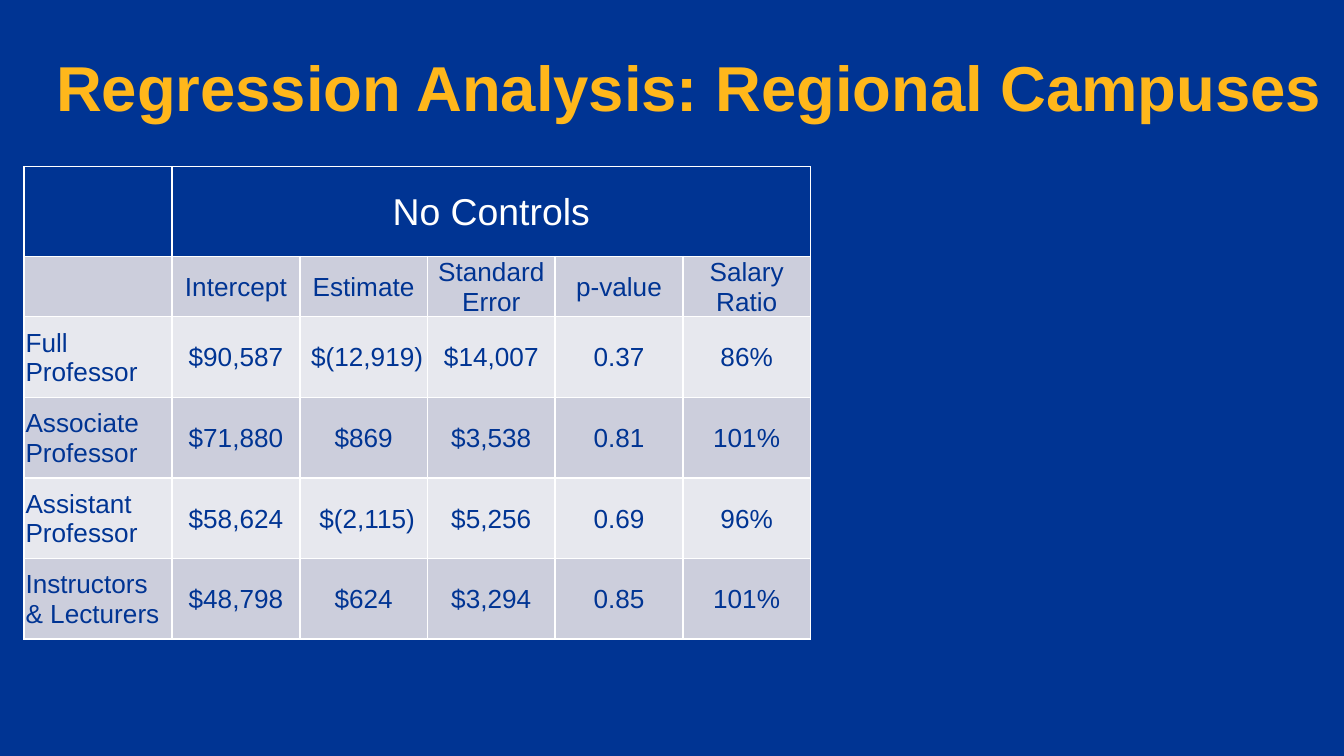
import dataclasses

import pptx
import pptx.dml.color
import pptx.enum.text
import pptx.oxml
import pptx.oxml.ns
import pptx.slide
import pptx.table
import pptx.text.text
import pptx.util

Pt = pptx.util.Pt
PP_ALIGN = pptx.enum.text.PP_ALIGN
MIDDLE = pptx.enum.text.MSO_ANCHOR.MIDDLE

FONT = "Arial"
NAVY = "003493"
GOLD = "FFB71B"
WHITE = "FFFFFF"
BAND_DARK = "CCCEDC"
BAND_LIGHT = "E7E8EE"
CELL_MARGIN = 0.7
NEGATIVE_INDENT = 4.5


@dataclasses.dataclass
class TextStyle:
    size: float
    color: str
    bold: bool = False
    alignment: PP_ALIGN = PP_ALIGN.CENTER


@dataclasses.dataclass
class SalaryRow:
    rank: str
    intercept: str
    estimate: str
    standard_error: str
    p_value: str
    salary_ratio: str


SALARY_ROWS = [
    SalaryRow("", "Intercept", "Estimate", "Standard Error", "p-value", "Salary Ratio"),
    SalaryRow("Full Professor", "$90,587", "$(12,919)", "$14,007", "0.37", "86%"),
    SalaryRow("Associate Professor", "$71,880", "$869", "$3,538", "0.81", "101%"),
    SalaryRow("Assistant Professor", "$58,624", "$(2,115)", "$5,256", "0.69", "96%"),
    SalaryRow("Instructors & Lecturers", "$48,798", "$624", "$3,294", "0.85", "101%"),
]
COLUMN_WIDTHS = [79.2] + [68.4] * 5
ROW_HEIGHTS = [48.2, 29.5] + [43.2] * 4

TITLE_STYLE = TextStyle(34, GOLD, bold=True, alignment=PP_ALIGN.LEFT)
HEADING_STYLE = TextStyle(20, WHITE)
VALUE_STYLE = TextStyle(14, NAVY)
RANK_STYLE = TextStyle(14, NAVY, alignment=PP_ALIGN.LEFT)


def rgb(color: str) -> pptx.dml.color.RGBColor:
    return pptx.dml.color.RGBColor.from_string(color)


def write_text(frame: pptx.text.text.TextFrame, text: str, style: TextStyle) -> None:
    frame.text = text
    paragraph = frame.paragraphs[0]
    paragraph.alignment = style.alignment
    fonts = [paragraph.font] + [run.font for run in paragraph.runs]
    for font in fonts:
        font.name = FONT
        font.size = Pt(style.size)
        font.bold = style.bold
        font.color.rgb = rgb(style.color)


def add_borders(cell: pptx.table._Cell, color: str, bottom_width: float) -> None:
    properties = cell._tc.get_or_add_tcPr()
    widths = {"lnL": 1, "lnR": 1, "lnT": 1, "lnB": bottom_width}
    for position, (side, width) in enumerate(widths.items()):
        border = pptx.oxml.parse_xml(
            f'<a:{side} {pptx.oxml.ns.nsdecls("a")} w="{Pt(width)}">'
            f'<a:solidFill><a:srgbClr val="{color}"/></a:solidFill></a:{side}>'
        )
        properties.insert(position, border)


def fill_cell(
    cell: pptx.table._Cell, text: str, style: TextStyle, fill: str, bottom_width: float = 1
) -> None:
    cell.fill.solid()
    cell.fill.fore_color.rgb = rgb(fill)
    cell.vertical_anchor = MIDDLE
    cell.margin_left = Pt(NEGATIVE_INDENT if "(" in text else CELL_MARGIN)
    cell.margin_right = cell.margin_top = Pt(CELL_MARGIN)
    cell.margin_bottom = Pt(0)
    write_text(cell.text_frame, text, style)
    add_borders(cell, WHITE, bottom_width)


def add_title(slide: pptx.slide.Slide, text: str) -> None:
    title = slide.shapes.add_textbox(Pt(23), Pt(23.8), Pt(697), Pt(49.7))
    frame = title.text_frame
    frame.word_wrap = True
    frame.vertical_anchor = MIDDLE
    write_text(frame, text, TITLE_STYLE)
    frame.paragraphs[0].line_spacing = 0.9


def add_salary_table(slide: pptx.slide.Slide) -> None:
    table = slide.shapes.add_table(
        len(ROW_HEIGHTS), len(COLUMN_WIDTHS), Pt(13), Pt(89.3),
        Pt(sum(COLUMN_WIDTHS)), Pt(sum(ROW_HEIGHTS)),
    ).table
    for column, width in zip(table.columns, COLUMN_WIDTHS):
        column.width = Pt(width)
    for row, height in zip(table.rows, ROW_HEIGHTS):
        row.height = Pt(height)

    for column_index in range(len(COLUMN_WIDTHS)):
        heading = "No Controls" if column_index == 1 else ""
        fill_cell(table.cell(0, column_index), heading, HEADING_STYLE, NAVY, bottom_width=1)
    table.cell(0, 1).merge(table.cell(0, len(COLUMN_WIDTHS) - 1))

    for row_index, salary_row in enumerate(SALARY_ROWS, start=1):
        fill = BAND_DARK if row_index % 2 else BAND_LIGHT
        for column_index, text in enumerate(dataclasses.astuple(salary_row)):
            style = VALUE_STYLE if column_index else RANK_STYLE
            fill_cell(table.cell(row_index, column_index), text, style, fill)


def main() -> None:
    presentation = pptx.Presentation()
    presentation.slide_width = Pt(720)
    presentation.slide_height = Pt(405)
    slide = presentation.slides.add_slide(presentation.slide_layouts[6])
    slide.background.fill.solid()
    slide.background.fill.fore_color.rgb = rgb(NAVY)
    add_salary_table(slide)
    add_title(slide, "Regression Analysis: Regional Campuses")
    presentation.save("out.pptx")


if __name__ == "__main__":
    main()
